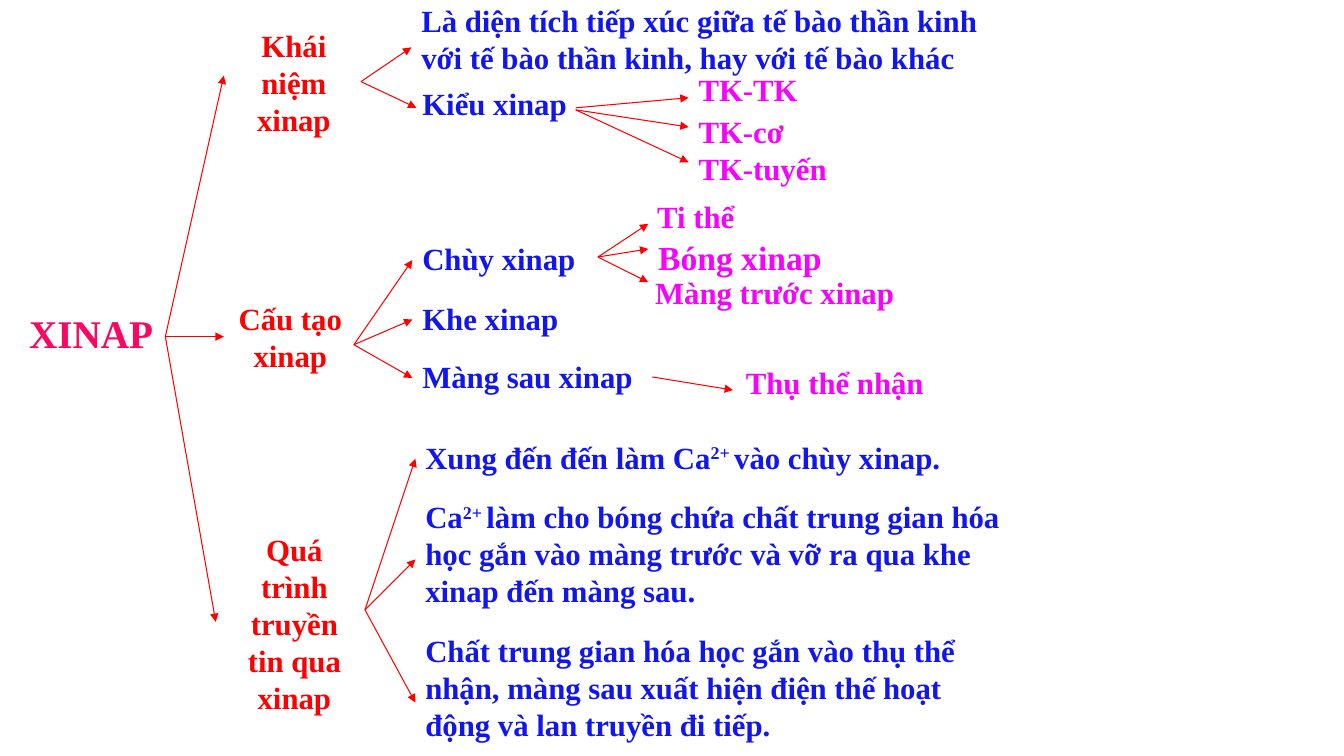
"""Build a mind map slide about the synapse, branching from left to right."""
from lxml import etree
from pptx import Presentation
from pptx.dml.color import RGBColor
from pptx.enum.shapes import MSO_CONNECTOR
from pptx.enum.text import MSO_AUTO_SIZE, PP_ALIGN
from pptx.oxml.ns import qn
from pptx.util import Inches, Pt

PINK = RGBColor(0xF9, 0x07, 0x63)
RED = RGBColor(0xFF, 0x00, 0x00)
BLUE = RGBColor(0x11, 0x16, 0xEF)
MAGENTA = RGBColor(0xF9, 0x01, 0xFF)
LEFT, CENTER = PP_ALIGN.LEFT, PP_ALIGN.CENTER
STRAIGHT = MSO_CONNECTOR.STRAIGHT
GROW = MSO_AUTO_SIZE.SHAPE_TO_FIT_TEXT
FONT = "Times New Roman"

ROOT = [("XINAP", 0.19, 3.02, 1.44, 0.57)]
TOPICS = [
    ("Khái niệm xinap", 2.25, 0.22, 1.33, 1.21),
    ("Cấu tạo xinap", 2.25, 2.92, 1.26, 0.84),
    ("Quá trình truyền tin qua xinap", 2.22, 5.22, 1.4, 1.95),
]
POINTS = [
    ("Là diện tích tiếp xúc giữa tế bào thần kinh với tế bào thần kinh, "
     "hay với tế bào khác", 4.08, -0.03, 6.15, 0.83),
    ("Kiểu xinap", 4.09, 0.79, 1.92, 0.47),
    ("Chùy xinap", 4.09, 2.33, 2.39, 0.47),
    ("Khe xinap", 4.09, 2.92, 3.18, 0.47),
    ("Màng sau xinap", 4.09, 3.5, 3.18, 0.47),
    ("Xung đến đến làm Ca^2+ ^vào chùy xinap.", 4.12, 4.3, 5.94, 0.47),
    ("Ca^2+ ^làm cho bóng chứa chất trung gian hóa học gắn vào màng trước "
     "và vỡ ra qua khe xinap đến màng sau.", 4.12, 4.89, 5.94, 1.21),
    ("Chất trung gian hóa học gắn vào thụ thể nhận, màng sau xuất hiện "
     "điện thế hoạt động và lan truyền đi tiếp.", 4.12, 6.22, 5.94, 1.21),
]
DETAILS = [
    ("TK-TK", 6.83, 0.65, 1.67, 0.47),
    ("TK-cơ", 6.83, 1.07, 1.67, 0.47),
    ("TK-tuyến", 6.83, 1.44, 1.67, 0.47),
    ("Ti thể", 6.42, 1.91, 1.42, 0.47),
    ("Màng trước xinap", 6.4, 2.67, 3.17, 0.47),
    ("Thụ thể nhận", 7.3, 3.56, 2.33, 0.47),
]
VESICLE = [("Bóng xinap", 6.43, 2.3, 2.33, 0.5)]

LEVELS = [
    (ROOT, dict(size=28, color=PINK)),
    (TOPICS, dict(color=RED, align=CENTER)),
    (POINTS, dict(color=BLUE)),
    (DETAILS, dict(color=MAGENTA)),
    (VESICLE, dict(size=24, color=MAGENTA)),
]

FANS = [
    ((1.64, 3.34), [(2.22, 0.75), (2.22, 3.34), (2.14, 6.17)]),
    ((3.58, 0.81), [(4.08, 0.47), (4.13, 1.07)]),
    ((3.51, 3.42), [(4.09, 2.58), (4.09, 3.17), (4.09, 3.75)]),
    ((3.62, 6.05), [(4.12, 4.55), (4.12, 5.55), (4.12, 6.97)]),
    ((5.71, 1.07), [(6.83, 0.97)]),
    ((5.71, 1.09), [(6.83, 1.26), (6.83, 1.61)]),
    ((5.93, 2.55), [(6.43, 2.22), (6.43, 2.47), (6.43, 2.8)]),
    ((6.47, 3.74), [(7.27, 3.87)]),
]


def add_text(slide, text, box, size=22, color=BLUE, align=LEFT):
    """Add a bold text box; parts between carets are raised."""
    frame = slide.shapes.add_textbox(*map(Inches, box)).text_frame
    frame.word_wrap = True
    frame.auto_size = GROW
    para = frame.paragraphs[0]
    para.alignment = align
    for i, part in enumerate(text.split("^")):
        run = para.add_run()
        run.text = part
        font = run.font
        font.name, font.size, font.bold = FONT, Pt(size), True
        font.color.rgb = color
        if i % 2:
            run._r.get_or_add_rPr().set("baseline", "30000")


def add_arrow(slide, start, end):
    """Add a thin red arrow from start to end."""
    arrow = slide.shapes.add_connector(STRAIGHT, *map(Inches, start + end))
    arrow.line.color.rgb = RED
    arrow.line.width = Pt(0.75)
    props = arrow._element.spPr
    etree.SubElement(props.find(qn("a:ln")), qn("a:tailEnd"), type="triangle")
    etree.SubElement(props, qn("a:effectLst"))


def main():
    """Draw every level of text, then the fans of arrows, and save."""
    deck = Presentation()
    deck.slide_width, deck.slide_height = Inches(13.33), Inches(7.5)
    slide = deck.slides.add_slide(deck.slide_layouts[6])
    for nodes, style in LEVELS:
        for text, *box in nodes:
            add_text(slide, text, box, **style)
    for start, ends in FANS:
        for end in ends:
            add_arrow(slide, start, end)
    deck.save("out.pptx")


if __name__ == "__main__":
    main()
